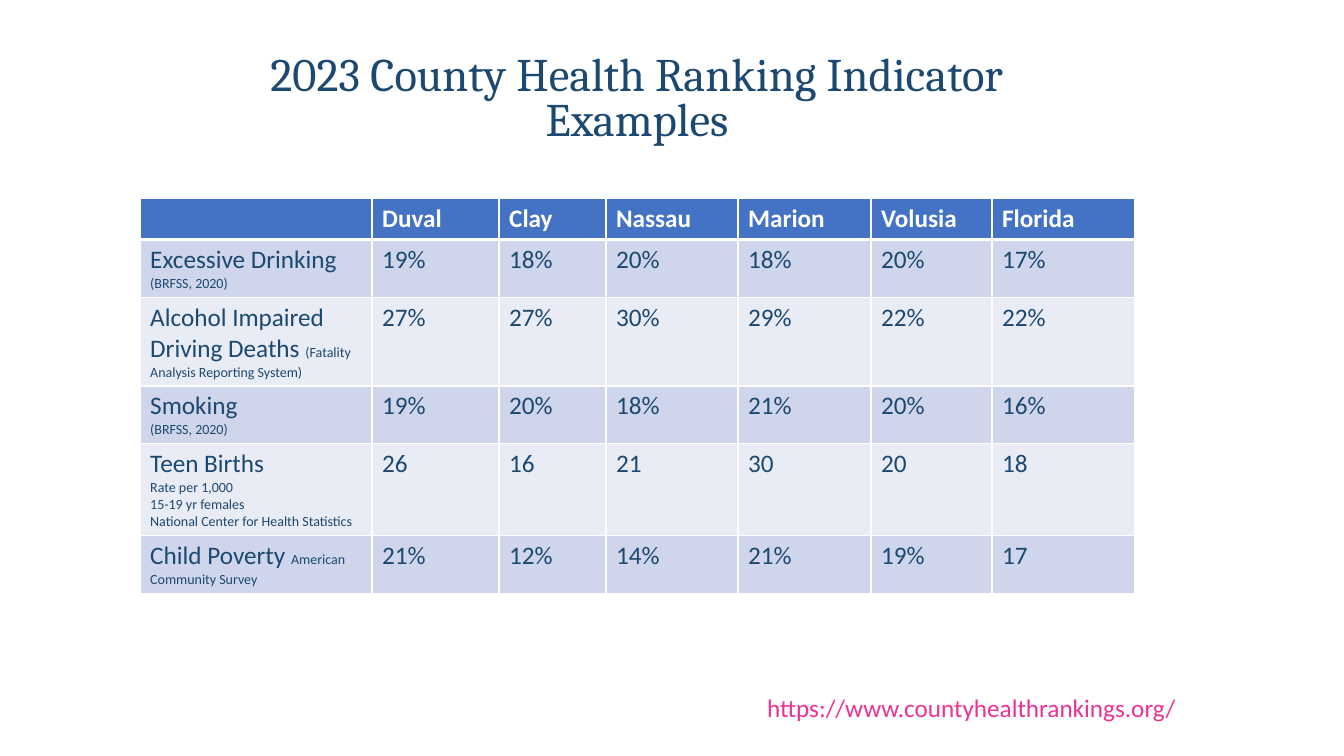
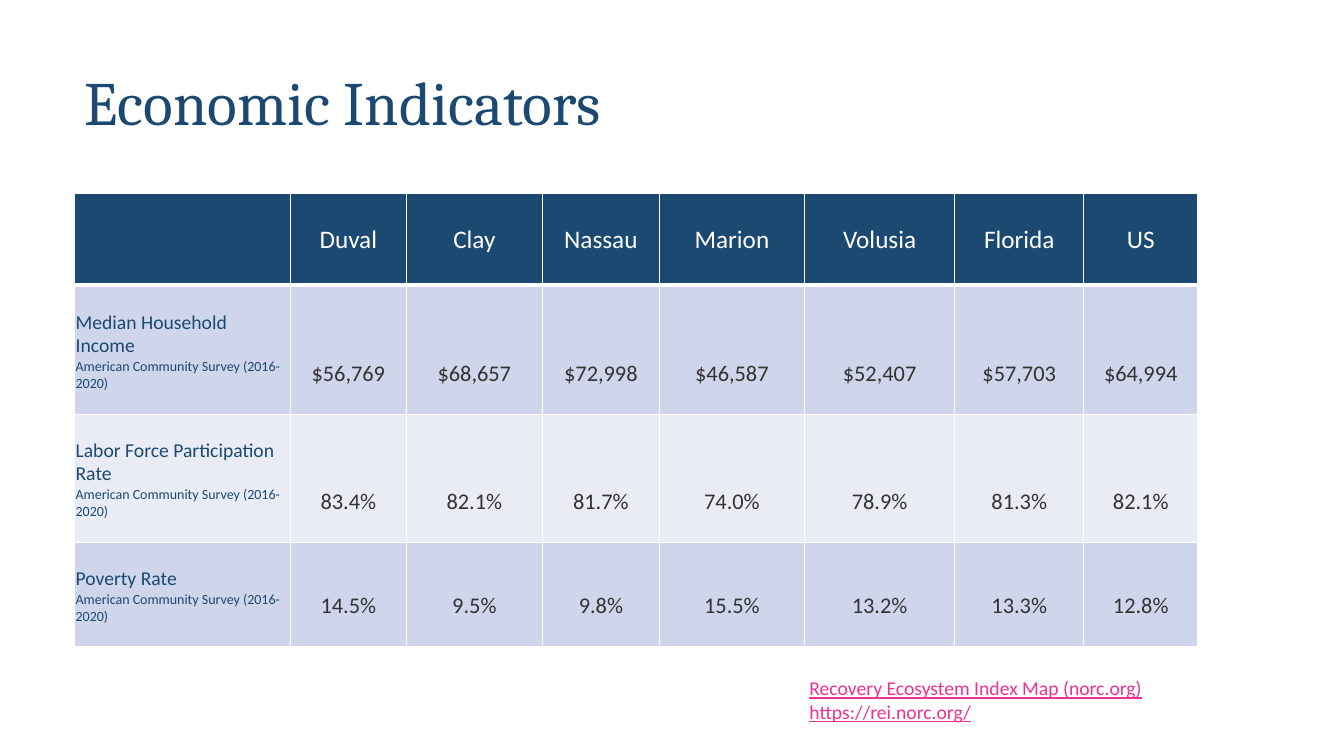
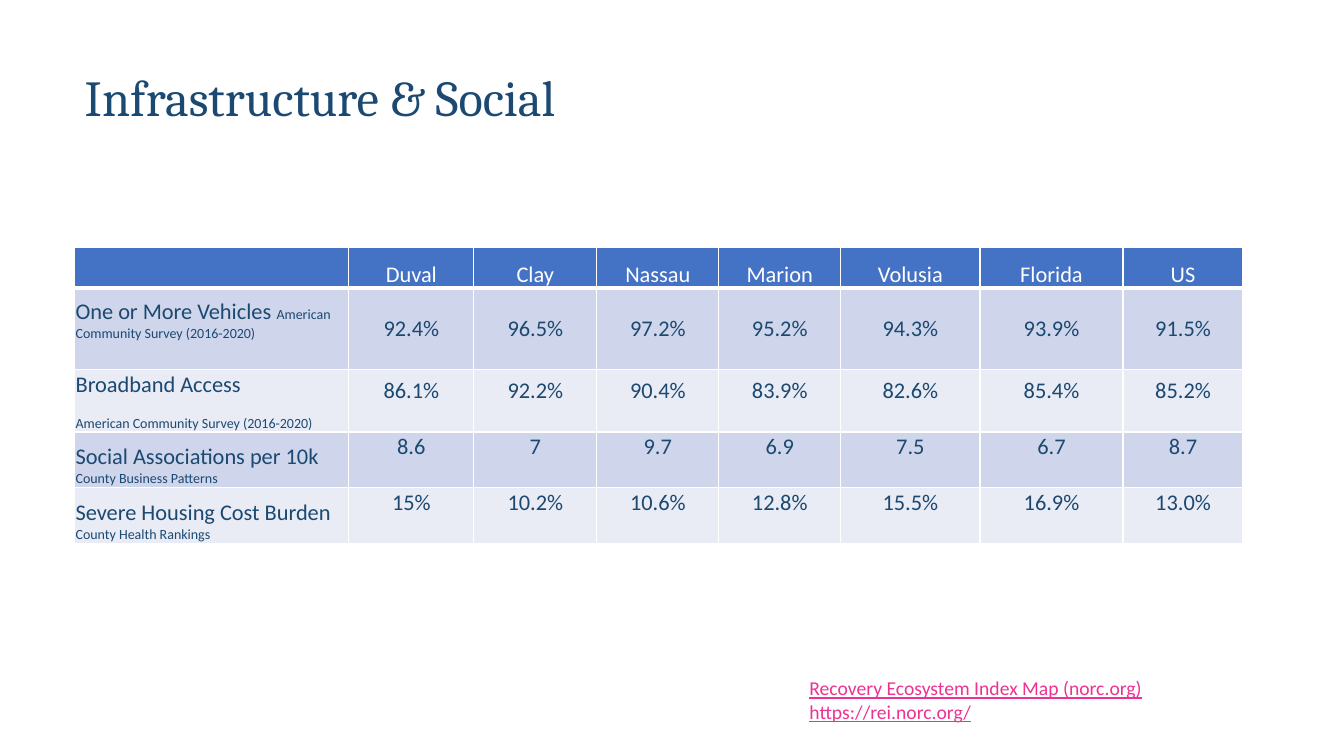
"""Builds three slides of county health, economic and infrastructure tables."""
from collections import namedtuple
from dataclasses import dataclass

from lxml import etree
from pptx import Presentation
from pptx import util as u
from pptx.dml.color import RGBColor
from pptx.enum import text
from pptx.oxml import ns


@dataclass(frozen=True)
class Theme:
    """Colours, fonts and type sizes shared by the slides."""
    navy: str = "1B4971"
    blue: str = "4472C4"
    pink: str = "ED3293"
    grey: str = "333333"
    white: str = "FFFFFF"
    bands: tuple = ("CFD5EA", "E9EBF5")
    heading: str = "Cambria"
    body: str = "Calibri"
    large: int = 18
    medium: int = 16
    small: int = 14
    note: int = 10


theme = Theme()
LEFT, CENTER = text.PP_ALIGN.LEFT, text.PP_ALIGN.CENTER
TOP, BOTTOM = text.MSO_ANCHOR.TOP, text.MSO_ANCHOR.BOTTOM
Row = namedtuple("Row", "height label values bottom gap", defaults=(0, 0))
COUNTIES = ["Duval", "Clay", "Nassau", "Marion", "Volusia", "Florida"]
SURVEY = "American Community Survey (2016-2020)"
INDEX_MAP = [("Recovery Ecosystem Index Map (norc.org)",), ("https://rei.norc.org/",)]


def write_text(frame, lines, size, font=theme.body, color=theme.navy, align=LEFT,
               bold=False, underline=False, spacing=None, gap=0):
    """Write one paragraph per line; a line is its main text and an optional note."""
    for index, line in enumerate(lines):
        paragraph = frame.paragraphs[0] if index == 0 else frame.add_paragraph()
        paragraph.alignment = align
        paragraph.line_spacing = spacing
        if index:
            paragraph.space_before = u.Pt(gap)
        for words, points in zip(line, (size, theme.note)):
            if words:
                run = paragraph.add_run()
                run.text = words
                run.font.name, run.font.size = font, u.Pt(points)
                run.font.bold, run.font.underline = bold, underline
                run.font.color.rgb = RGBColor.from_string(color)


def style_cell(cell, fill, top, bottom):
    """Give a cell white borders, with top and bottom widths in points, and a fill."""
    properties = cell._tc.get_or_add_tcPr()
    for side, width in (("L", 1), ("R", 1), ("T", top), ("B", bottom)):
        line = etree.SubElement(properties, ns.qn(f"a:ln{side}"), w=str(u.Pt(width)))
        solid = etree.SubElement(line, ns.qn("a:solidFill"))
        etree.SubElement(solid, ns.qn("a:srgbClr"), val=theme.white)
    cell.fill.solid()
    cell.fill.fore_color.rgb = RGBColor.from_string(fill)


pages = [
    dict(
        title="2023 County Health Ranking Indicator Examples",
        title_box=(2, 0.48, 8.64, 1.01), title_anchor=BOTTOM,
        title_format=dict(size=33.3, align=CENTER, spacing=0.8),
        table_at=(1.39, 1.97), columns=[2.3, 1.26, 1.06, 1.31, 1.32, 1.2, 1.41],
        header_fill=theme.blue, header=COUNTIES, header_height=0.4,
        header_format=dict(size=theme.large, bold=True),
        label_size=theme.large, value_format=dict(size=theme.large),
        tight=False,
        rows=[
            Row(0.57, [("Excessive Drinking",), ("", "(BRFSS, 2020)")],
                ["19%", "18%", "20%", "18%", "20%", "17%"]),
            Row(0.87, [("Alcohol Impaired Driving Deaths ", "(Fatality Analysis Reporting System)")],
                ["27%", "27%", "30%", "29%", "22%", "22%"]),
            Row(0.57, [("Smoking",), ("", "(BRFSS, 2020)")],
                ["19%", "20%", "18%", "21%", "20%", "16%"]),
            Row(0.9, [("Teen Births",), ("", "Rate per 1,000"), ("", "15-19 yr females"),
                      ("", "National Center for Health Statistics")],
                ["26", "16", "21", "30", "20", "18"]),
            Row(0.57, [("Child Poverty ", "American Community Survey")],
                ["21%", "12%", "14%", "21%", "19%", "17"]),
        ],
        source=[("https://www.countyhealthrankings.org/",)],
        source_box=(7.51, 6.82, 5.8, 0.4), source_format=dict(size=theme.large),
    ),
    dict(
        title="Economic Indicators",
        title_box=(0.74, 0.67, 9.4, 1.44), title_anchor=TOP,
        title_format=dict(size=44, spacing=0.9),
        table_at=(0.74, 1.92), columns=[2.14, 1.15, 1.35, 1.16, 1.44, 1.49, 1.28, 1.13],
        header_fill=theme.navy, header=COUNTIES + ["US"], header_height=0.91,
        header_format=dict(size=theme.large, align=CENTER),
        label_size=theme.small,
        value_format=dict(size=theme.medium, color=theme.grey, align=CENTER),
        tight=True, header_bottom=0.3,
        rows=[
            Row(1.28, [("Median Household Income",), ("", SURVEY)],
                ["$56,769", "$68,657", "$72,998", "$46,587", "$52,407", "$57,703", "$64,994"], 0.22),
            Row(1.27, [("Labor Force Participation Rate",), ("", SURVEY)],
                ["83.4%", "82.1%", "81.7%", "74.0%", "78.9%", "81.3%", "82.1%"], 0.22),
            Row(1.04, [("Poverty Rate",), ("", SURVEY)],
                ["14.5%", "9.5%", "9.8%", "15.5%", "13.2%", "13.3%", "12.8%"], 0.22),
        ],
        source=INDEX_MAP, source_box=(7.93, 6.66, 5.24, 0.57),
        source_format=dict(size=theme.small, underline=True),
    ),
    dict(
        title="Infrastructure & Social",
        title_box=(0.74, 0.67, 9.4, 1.44), title_anchor=TOP,
        title_format=dict(size=36, spacing=0.9),
        table_at=(0.74, 2.45), columns=[2.72, 1.24, 1.22, 1.21, 1.21, 1.38, 1.42, 1.19],
        header_fill=theme.blue, header=COUNTIES + ["US"], header_height=0.41,
        header_format=dict(size=theme.medium, align=CENTER),
        label_size=theme.medium, value_format=dict(size=theme.medium, align=CENTER),
        tight=True, header_bottom=0,
        rows=[
            Row(0.81, [("One or More Vehicles ", SURVEY)],
                ["92.4%", "96.5%", "97.2%", "95.2%", "94.3%", "93.9%", "91.5%"], 0.27),
            Row(0.6, [("Broadband Access",), ("", SURVEY)],
                ["86.1%", "92.2%", "90.4%", "83.9%", "82.6%", "85.4%", "85.2%"], gap=12),
            Row(0.55, [("Social Associations per 10k",), ("", "County Business Patterns")],
                ["8.6", "7", "9.7", "6.9", "7.5", "6.7", "8.7"]),
            Row(0.53, [("Severe Housing Cost Burden",), ("", "County Health Rankings")],
                ["15%", "10.2%", "10.6%", "12.8%", "15.5%", "16.9%", "13.0%"]),
        ],
        source=INDEX_MAP, source_box=(7.93, 6.66, 5.24, 0.57),
        source_format=dict(size=theme.small, underline=True),
    ),
]

presentation = Presentation()
presentation.slide_width, presentation.slide_height = u.Inches(13.33), u.Inches(7.5)

for page in pages:
    slide = presentation.slides.add_slide(presentation.slide_layouts[5])

    title = slide.shapes.title
    title.left, title.top, title.width, title.height = map(u.Inches, page["title_box"])
    title.text_frame.auto_size = text.MSO_AUTO_SIZE.NONE
    title.text_frame.vertical_anchor = page["title_anchor"]
    write_text(title.text_frame, [(page["title"],)], font=theme.heading, **page["title_format"])

    header = Row(page["header_height"], [], page["header"], page.get("header_bottom", 0))
    rows = [header] + page["rows"]
    size = sum(page["columns"]), sum(row.height for row in rows)
    table = slide.shapes.add_table(len(rows), len(page["columns"]),
                                   *map(u.Inches, page["table_at"] + size)).table
    table.first_row = table.horz_banding = False
    for column, width in zip(table.columns, page["columns"]):
        column.width = u.Inches(width)

    for row_index, row in enumerate(rows):
        is_header = row_index == 0
        table.rows[row_index].height = u.Inches(row.height)
        fill = page["header_fill"] if is_header else theme.bands[(row_index - 1) % 2]
        for column_index, value in enumerate([None] + row.values):
            cell = table.cell(row_index, column_index)
            style_cell(cell, fill, 3 if row_index == 1 else 1, 3 if is_header else 1)
            is_label = column_index == 0
            if page["tight"]:
                cell.vertical_anchor = BOTTOM
                cell.margin_left = cell.margin_right = cell.margin_top = u.Inches(0.01)
                cell.margin_bottom = u.Inches(row.bottom if is_label or is_header else 0.27)
            if is_label:
                write_text(cell.text_frame, row.label, page["label_size"], gap=row.gap)
            elif is_header:
                write_text(cell.text_frame, [(value,)], color=theme.white, **page["header_format"])
            else:
                write_text(cell.text_frame, [(value,)], **page["value_format"])

    source = slide.shapes.add_textbox(*map(u.Inches, page["source_box"]))
    source.text_frame.word_wrap = True
    write_text(source.text_frame, page["source"], color=theme.pink, **page["source_format"])

presentation.save("out.pptx")
